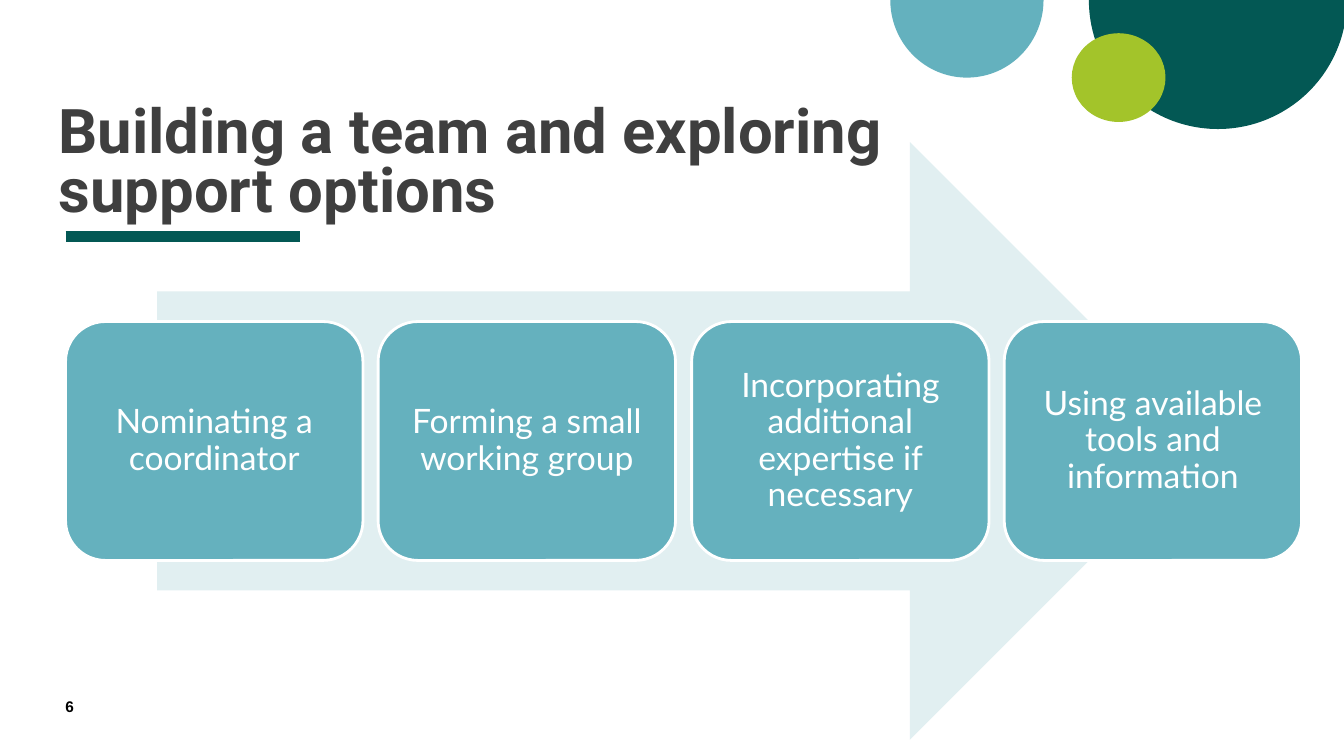
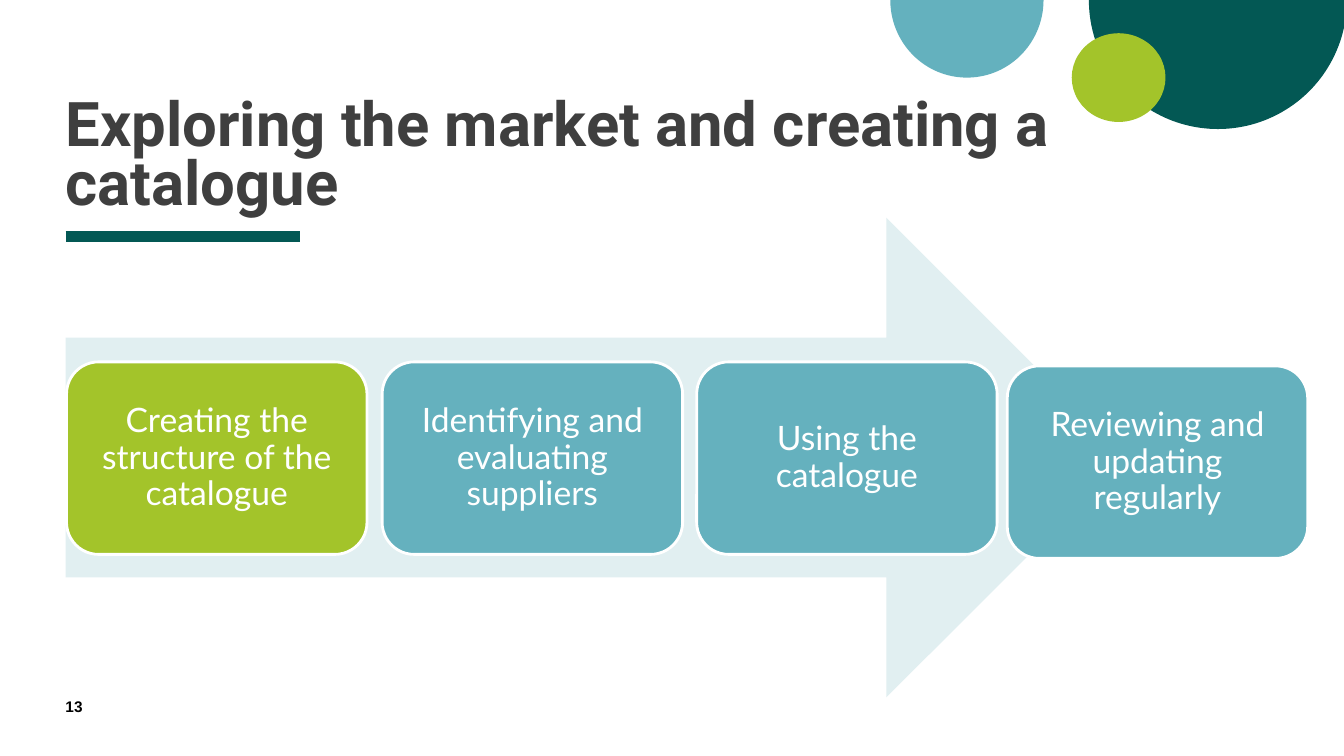
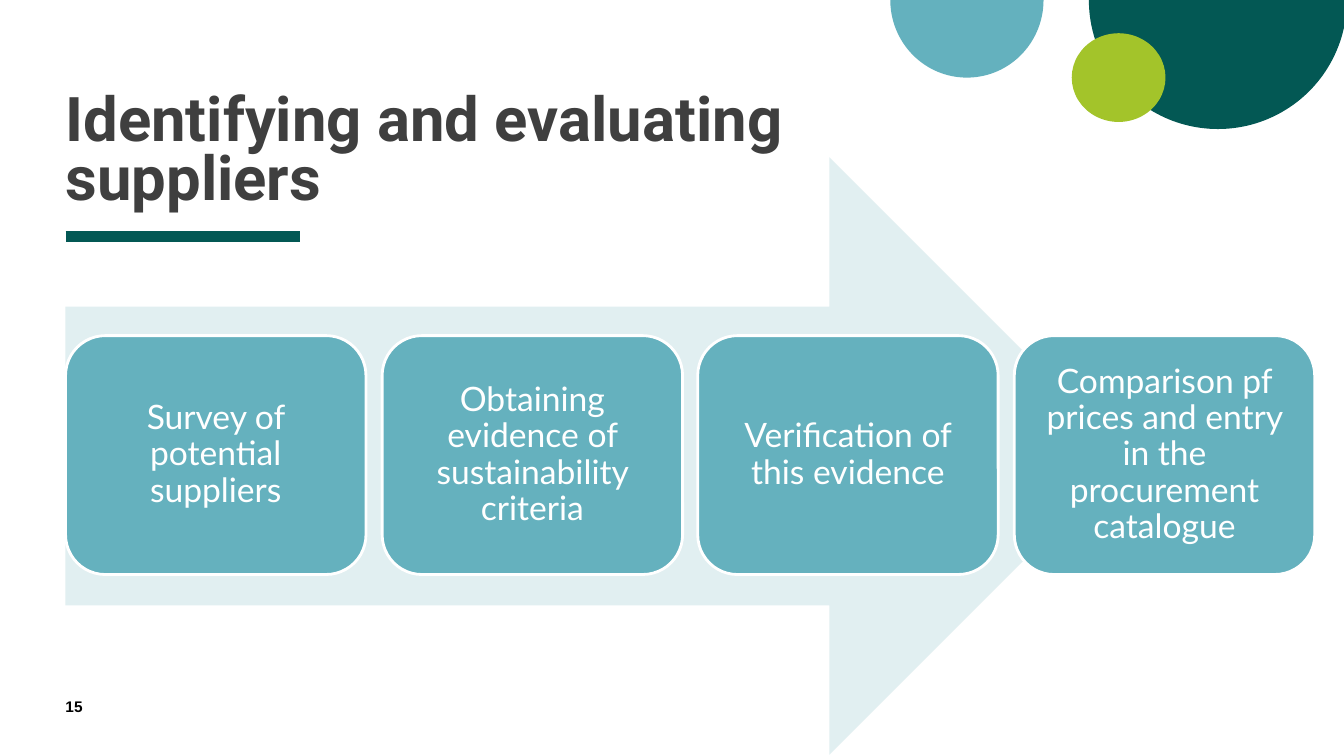
from lxml import etree
from pptx import Presentation
from pptx import util as u
from pptx.dml.color import RGBColor
from pptx.enum import shapes, text
from pptx.oxml.ns import qn

PX = 9144
DARK_GREEN = RGBColor(0x03, 0x58, 0x54)
CIRCLE_TEAL = RGBColor(0x64, 0xB1, 0xBE)
CARD_TEAL = RGBColor(0x65, 0xB1, 0xBE)
LIME = RGBColor(0xA3, 0xC4, 0x2A)
PALE = RGBColor(0xE1, 0xEF, 0xF1)
GREY = RGBColor(0x3F, 0x3F, 0x3F)
BLACK = RGBColor(0, 0, 0)
WHITE = RGBColor(0xFF, 0xFF, 0xFF)

KIND = shapes.MSO_SHAPE
ALIGN = text.PP_ALIGN
ANCHOR = text.MSO_ANCHOR

TITLE = dict(name="Roboto", size=u.Pt(44), bold=True, color=GREY)
NUMBER = dict(name="Arial", size=u.Pt(11), bold=True, color=BLACK)
STEP = dict(name="Lato", size=u.Pt(24), bold=False, color=WHITE)

CIRCLES = [
    (KIND.PIE, (1080, -128, 256, 256), DARK_GREEN, 107.96),
    (KIND.PIE, (883, -77, 152, 154), CIRCLE_TEAL, 108.52),
    (KIND.OVAL, (1063, 33, 93, 88), LIME, None),
]

SLIDES = [
    dict(
        title="Building a team and exploring support options",
        title_box=(58, 17, 872, 206), number="6",
        arrow=(156, 141, 1043, 593),
        first=65, span=931, top=319, card=(295, 237), nudge=(0, 0),
        steps=["Nominating a coordinator", "Forming a small working group",
               "Incorporating additional expertise if necessary",
               "Using available tools and information"],
        current=None,
    ),
    dict(
        title="Exploring the market and creating a catalogue",
        title_box=(65, 42, 1020, 174), number="13",
        arrow=(65, 216, 1052, 476),
        first=66, span=938, top=359, card=(298, 191), nudge=(-5, 4),
        steps=["Creating the structure of the catalogue",
               "Identifying and evaluating suppliers",
               "Using the catalogue", "Reviewing and updating regularly"],
        current=0,
    ),
    dict(
        title="Identifying and evaluating suppliers",
        title_box=(65, 37, 742, 174), number="15",
        arrow=(65, 156, 1054, 593),
        first=65, span=941, top=333, card=(298, 237), nudge=(0, 0),
        steps=["Survey of potential suppliers",
               "Obtaining evidence of sustainability criteria",
               "Verification of this evidence",
               "Comparison pf prices and entry in the procurement catalogue"],
        current=None,
    ),
]


def draw(slide, kind, box, fill):
    part = slide.shapes.add_shape(kind, *[n * PX for n in box])
    part.shadow.inherit = False
    part.fill.solid()
    part.fill.fore_color.rgb = fill
    part.line.fill.background()
    return part


def write(part, words, style, anchor, inset=0, align=ALIGN.LEFT, spacing=1.0):
    frame = part.text_frame
    margins = {f"margin_{side}": inset * PX for side in ("left", "top", "right", "bottom")}
    for key, value in dict(margins, word_wrap=True, vertical_anchor=anchor).items():
        setattr(frame, key, value)
    line = frame.paragraphs[0]
    line.alignment = align
    line.line_spacing = spacing
    run = line.add_run()
    run.text = words
    for key, value in style.items():
        if key == "color":
            run.font.color.rgb = value
        else:
            setattr(run.font, key, value)


deck = Presentation()
deck.slide_width = 1333 * PX
deck.slide_height = 750 * PX

for content in SLIDES:
    slide = deck.slides.add_slide(deck.slide_layouts[6])

    for kind, box, fill, sweep in CIRCLES:
        circle = draw(slide, kind, box, fill)
        if sweep:
            circle.adjustments[0] = 0
            circle.adjustments[1] = sweep

    underline = slide.shapes.add_connector(
        shapes.MSO_CONNECTOR.STRAIGHT, 65 * PX, 235 * PX, 298 * PX, 235 * PX)
    underline.line.color.rgb = DARK_GREEN
    underline.line.width = u.Pt(8)
    etree.SubElement(underline._element.spPr, qn("a:effectLst"))

    heading = slide.shapes.add_textbox(*[n * PX for n in content["title_box"]])
    write(heading, content["title"], TITLE, ANCHOR.BOTTOM, spacing=0.8)
    page_number = slide.shapes.add_textbox(65 * PX, 692 * PX, 57 * PX, 27 * PX)
    write(page_number, content["number"], NUMBER, ANCHOR.TOP)

    draw(slide, KIND.RIGHT_ARROW, content["arrow"], PALE)

    last = len(content["steps"]) - 1
    for i, words in enumerate(content["steps"]):
        shift_x, shift_y = content["nudge"] if i == last else (0, 0)
        left = content["first"] + round(content["span"] * i / last) + shift_x
        fill = LIME if i == content["current"] else CARD_TEAL
        card = draw(slide, KIND.ROUNDED_RECTANGLE,
                    (left, content["top"] + shift_y, *content["card"]), fill)
        card.line.color.rgb = WHITE
        card.line.width = u.Pt(2)
        write(card, words, STEP, ANCHOR.MIDDLE, 12, ALIGN.CENTER, 0.9)

deck.save("out.pptx")
